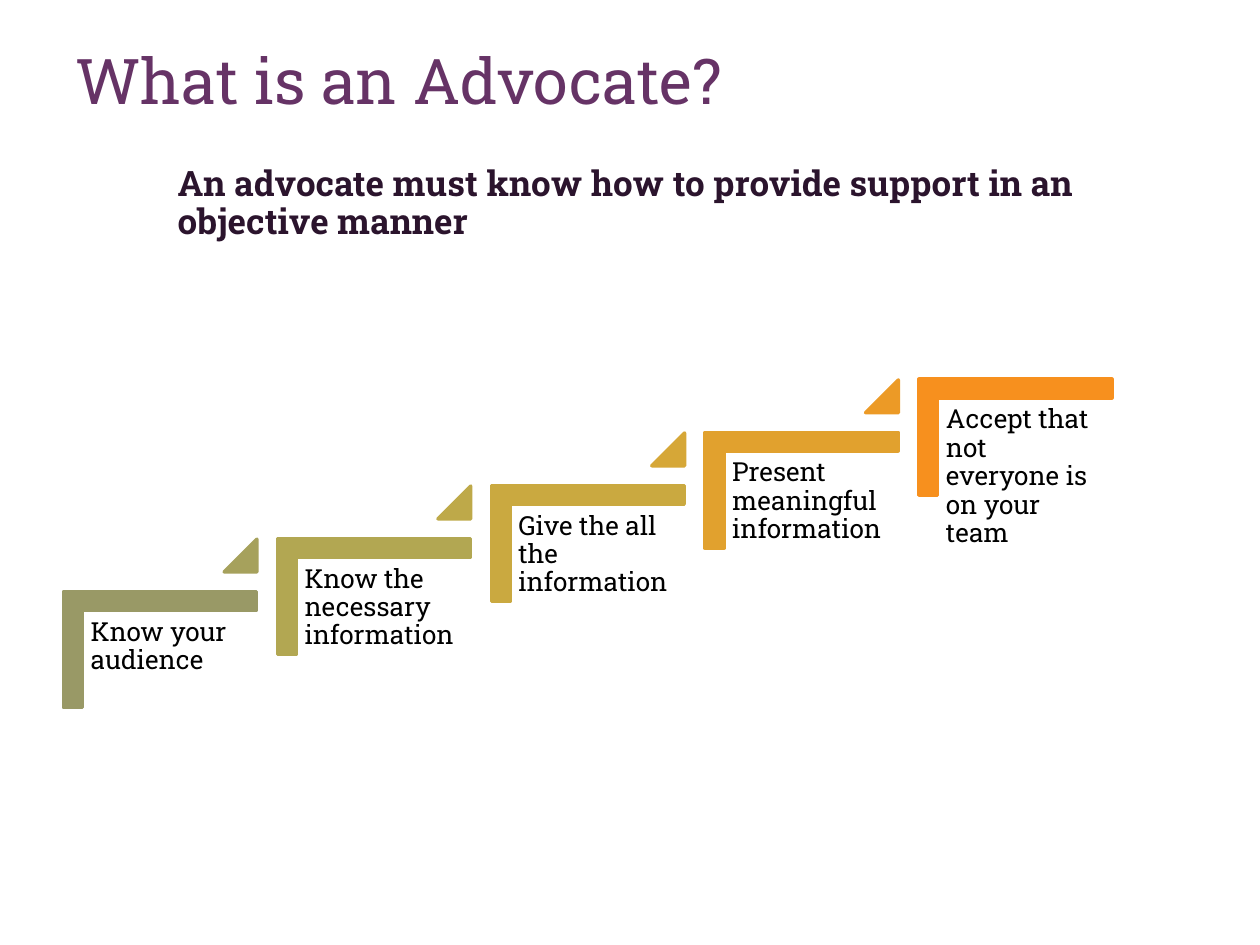
"""Build the slide that shows the five rising steps of an advocate."""
from pptx import Presentation
from pptx import util as u
from pptx.dml.color import RGBColor
from pptx.enum import shapes, text

FONT = "Roboto Slab"
PURPLE = RGBColor(0x66, 0x33, 0x66)
PLUM = RGBColor(0x2B, 0x14, 0x2D)
BLACK = RGBColor(0, 0, 0)
STEPS = [
    ("Know your audience", RGBColor(0x99, 0x99, 0x66), RGBColor(0xA6, 0xA1, 0x5C)),
    ("Know the necessary information", RGBColor(0xB2, 0xA7, 0x52), RGBColor(0xBE, 0xA9, 0x49)),
    ("Give the all the information", RGBColor(0xCA, 0xA9, 0x40), RGBColor(0xD6, 0xA7, 0x37)),
    ("Present meaningful information", RGBColor(0xE1, 0xA1, 0x2E), RGBColor(0xEC, 0x9A, 0x26)),
    ("Accept that not everyone is on your team", RGBColor(0xF7, 0x90, 0x1E), None),
]
STEP_X, STEP_Y = 4.31, 1.07


def add_text(parent, box, content, size, color, spacing, margins):
    sp = parent.add_textbox(*map(u.Cm, box))
    tf = sp.text_frame
    tf.word_wrap = True
    tf.vertical_anchor = text.MSO_ANCHOR.TOP
    tf.margin_left, tf.margin_top, tf.margin_right, tf.margin_bottom = map(u.Cm, margins)
    p = tf.paragraphs[0]
    p.text = content
    p.line_spacing = spacing
    p.font.name, p.font.size, p.font.color.rgb = FONT, u.Pt(size), color
    return p


def add_block(parent, kind, box, color, adjustments):
    sp = parent.add_shape(kind, *map(u.Cm, box))
    sp.shadow.inherit = False
    sp.fill.solid()
    sp.fill.fore_color.rgb = color
    sp.line.color.rgb = color
    sp.line.width = u.Pt(2)
    for i, value in enumerate(adjustments):
        sp.adjustments[i] = value
    return sp


prs = Presentation()
prs.slide_width, prs.slide_height = u.Cm(25.4), u.Cm(19.05)
s = prs.slides.add_slide(prs.slide_layouts[6])

add_text(s.shapes, (1.27, 0.76, 21.16, 2.41), "What is an Advocate?",
         36, PURPLE, 1.0, (0.25, 0.07, 0.25, 0.13))

stairs = s.shapes.add_group_shape().shapes
for i, (label, color, arrow_color) in enumerate(STEPS):
    x, y = i * STEP_X, -i * STEP_Y
    sp = add_block(stairs, shapes.MSO_SHAPE.CORNER,
                   (2.06 + x, 11.15 + y, 2.34, 3.89), color, (0.16, 0.16))
    sp.rotation = 90
    add_text(stairs, (1.68 + x, 12.32 + y, 3.53, 3.07), label,
             15, BLACK, 0.9, (0.15, 0.15, 0.15, 0.15))
    if arrow_color:
        add_block(stairs, shapes.MSO_SHAPE.ISOSCELES_TRIANGLE,
                  (4.52 + x, 10.87 + y, 0.66, 0.66), arrow_color, (1,))

p = add_text(s.shapes, (1.27, 3.18, 21.16, 1.07),
             "An advocate must know how to provide support in an objective manner",
             20, PLUM, 0.9, (2.31, 0.18, 0.25, 0.13))
p.font.bold = True

prs.save("out.pptx")
